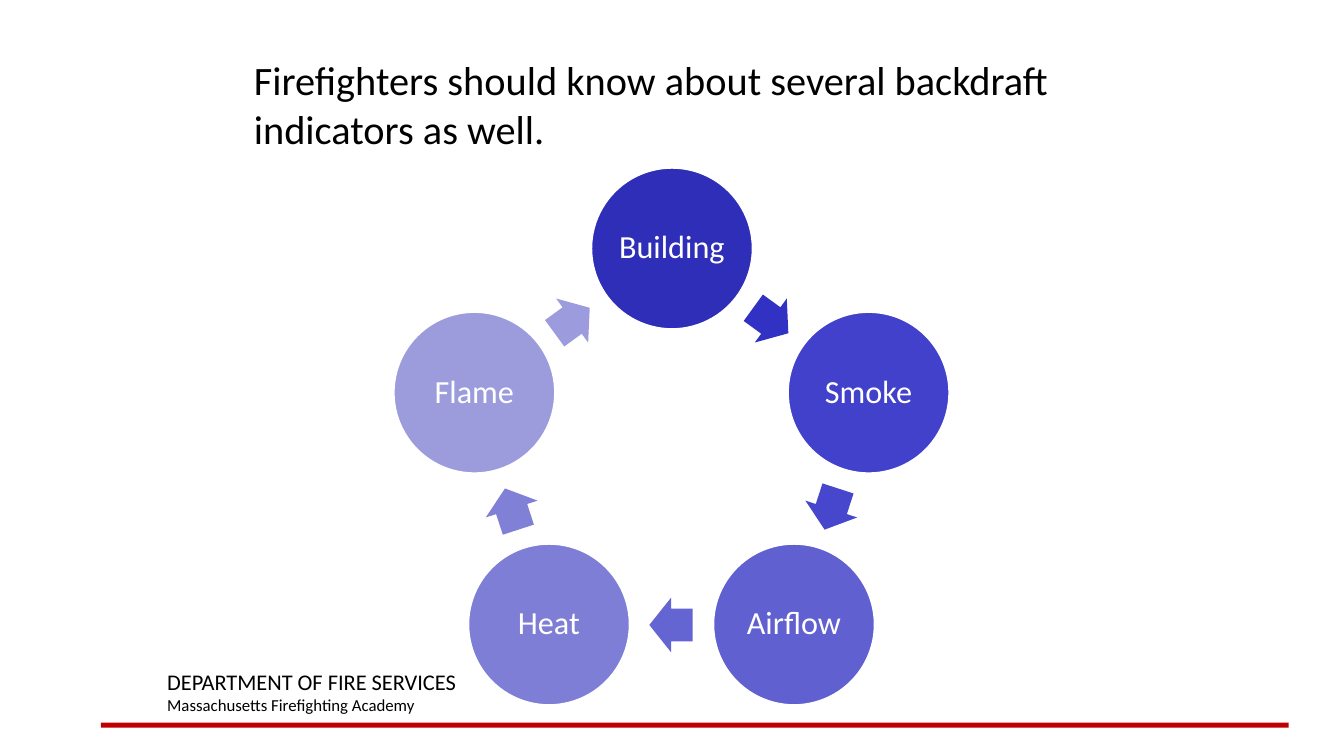
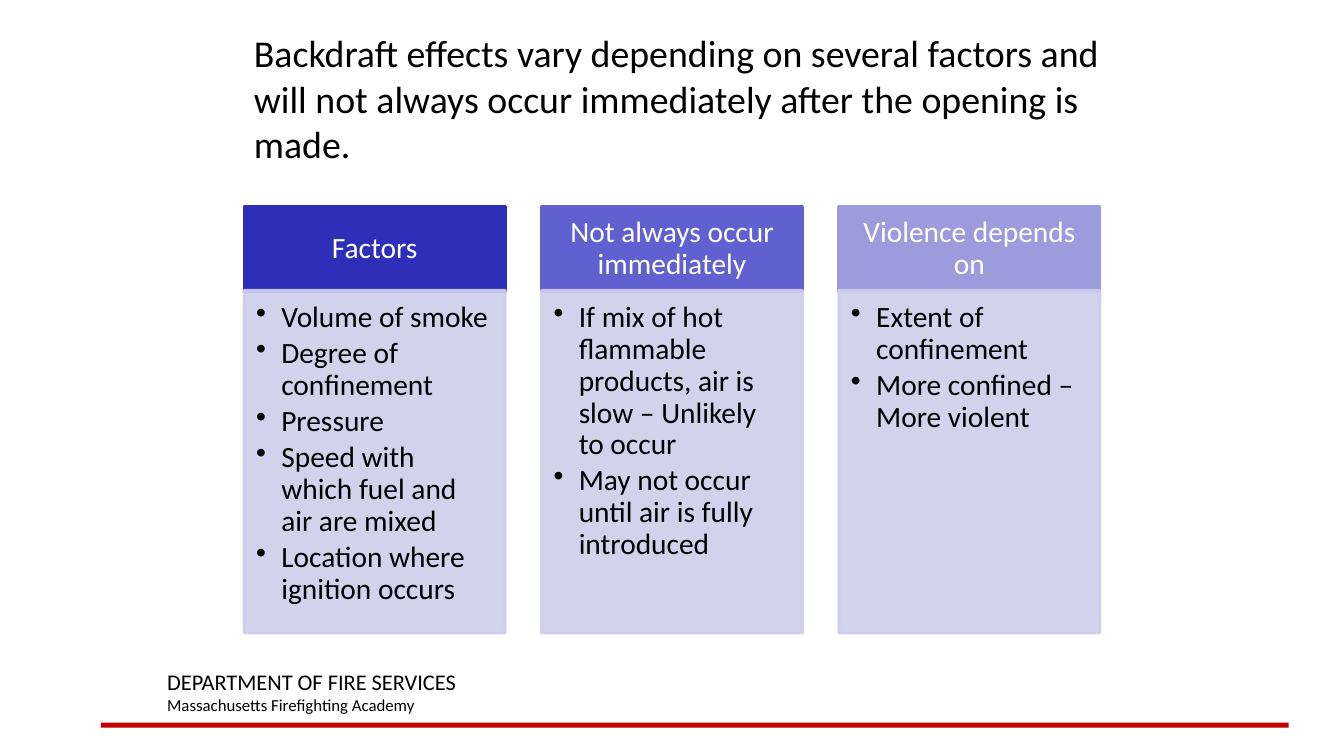
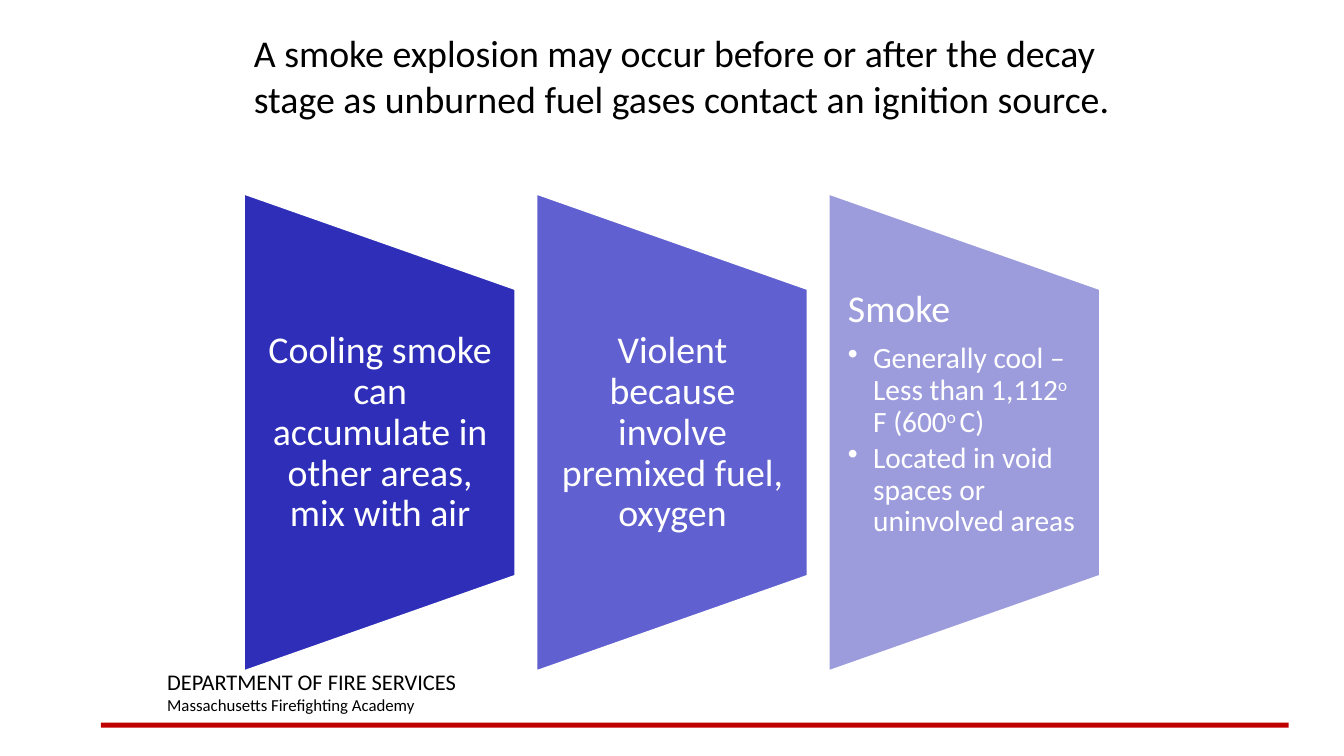
from dataclasses import dataclass
from math import cos, radians, sin

from lxml.etree import SubElement
from pptx import Presentation
from pptx.dml.color import RGBColor
from pptx.enum.shapes import MSO_SHAPE
from pptx.enum.text import MSO_ANCHOR, PP_ALIGN
from pptx.oxml.ns import qn
from pptx.presentation import Presentation as Deck
from pptx.shapes.autoshape import Shape
from pptx.slide import Slide
from pptx.util import Emu, Pt

PX = 9144  # 100 px to the inch
FONT = "Calibri"
COLORS = {
    "page": "FFFFFF",
    "ink": "000000",
    "light": "FFFFFF",
    "rule": "C00000",
    "panel": "CECEEC",
    "first": "2E2EB9",
    "middle": "6060D0",
    "last": "9C9CDD",
}
COLUMN_COLORS = (COLORS["first"], COLORS["middle"], COLORS["last"])


@dataclass(frozen=True)
class Box:
    left: int
    top: int
    width: int
    height: int

    def emu(self) -> tuple[Emu, ...]:
        return tuple(Emu(n * PX) for n in (self.left, self.top, self.width, self.height))


@dataclass(frozen=True)
class Line:
    """One paragraph; every second piece of it is superscript."""
    pieces: tuple[str, ...]
    size: float
    color: str = COLORS["ink"]
    align: PP_ALIGN = PP_ALIGN.LEFT
    bullet: bool = False
    spacing: float = 0.9
    after: float = 0.35


@dataclass(frozen=True)
class Stage:
    label: str
    color: str
    arrow_color: str


@dataclass(frozen=True)
class Column:
    heading: str
    points: tuple[str, ...]


STAGES = (
    Stage("Building", COLORS["first"], "3131C3"),
    Stage("Smoke", "4141CB", "4747CD"),
    Stage("Airflow", COLORS["middle"], "6464D2"),
    Stage("Heat", "7E7ED6", "8080D7"),
    Stage("Flame", COLORS["last"], "9B9BDD"),
)
COLUMNS = (
    Column("Factors", (
        "Volume of smoke",
        "Degree of confinement",
        "Pressure",
        "Speed with which fuel and air are mixed",
        "Location where ignition occurs",
    )),
    Column("Not always occur immediately", (
        "If mix of hot flammable products, air is slow – Unlikely to occur",
        "May not occur until air is fully introduced",
    )),
    Column("Violence depends on", (
        "Extent of confinement",
        "More confined – More violent",
    )),
)


def heading_line(text: str, size: float) -> Line:
    return Line((text,), size, COLORS["light"], PP_ALIGN.CENTER)


def bullet_line(*pieces: str, color: str = COLORS["ink"]) -> Line:
    return Line(pieces, 21, color, bullet=True, after=0.15)


EXPLOSION_CARDS = (
    (heading_line("Cooling smoke can accumulate in other areas, mix with air", 27),),
    (heading_line("Violent because involve premixed fuel, oxygen", 27),),
    (
        Line(("Smoke",), 27, COLORS["light"]),
        bullet_line("Generally cool – Less than 1,112", "o ", "F (600", "o ", "C)",
                    color=COLORS["light"]),
        bullet_line("Located in void spaces or uninvolved areas", color=COLORS["light"]),
    ),
)


# Shared drawing
def write(shape: Shape, lines: tuple[Line, ...], anchor: MSO_ANCHOR = MSO_ANCHOR.TOP,
          insets: tuple[int, int, int, int] = (10, 5, 10, 5)) -> None:
    frame = shape.text_frame
    frame.word_wrap = True
    frame.vertical_anchor = anchor
    (frame.margin_left, frame.margin_top,
     frame.margin_right, frame.margin_bottom) = (Emu(n * PX) for n in insets)
    for index, line in enumerate(lines):
        paragraph = frame.add_paragraph() if index else frame.paragraphs[0]
        if line.bullet:
            paragraph.level = 1
            properties = paragraph._p.get_or_add_pPr()
            properties.set("marL", str(25 * PX))
            properties.set("indent", str(-25 * PX))
            SubElement(properties, qn("a:buChar")).set("char", "•")
        paragraph.alignment = line.align
        paragraph.line_spacing = line.spacing
        if index < len(lines) - 1:
            paragraph.space_after = Pt(line.size * line.after)
        for position, piece in enumerate(line.pieces):
            run = paragraph.add_run()
            run.text = piece
            run.font.name = FONT
            run.font.size = Pt(line.size)
            run.font.color.rgb = RGBColor.from_string(line.color)
            if position % 2:
                run._r.get_or_add_rPr().set("baseline", "30000")


def add_block(slide: Slide, kind: MSO_SHAPE, box: Box, fill: str,
              outline: str | None = None, opacity: int = 100) -> Shape:
    shape = slide.shapes.add_shape(kind, *box.emu())
    shape.shadow.inherit = False
    shape.fill.solid()
    shape.fill.fore_color.rgb = RGBColor.from_string(fill)
    if outline:
        shape.line.color.rgb = RGBColor.from_string(outline)
        shape.line.width = Pt(2)
    else:
        shape.line.fill.background()
    if opacity < 100:
        for color in shape._element.spPr.iter(qn("a:srgbClr")):
            SubElement(color, qn("a:alpha")).set("val", str(opacity * 1000))
    return shape


def add_text(slide: Slide, box: Box, lines: tuple[Line, ...], **layout) -> None:
    write(slide.shapes.add_textbox(*box.emu()), lines, **layout)


def add_page(deck: Deck, title: str, title_top: int, title_size: float) -> Slide:
    slide = deck.slides.add_slide(deck.slide_layouts[6])
    slide.background.fill.solid()
    slide.background.fill.fore_color.rgb = RGBColor.from_string(COLORS["page"])
    # Footer
    add_block(slide, MSO_SHAPE.RECTANGLE, Box(100, 717, 1178, 5), COLORS["rule"])
    add_text(slide, Box(156, 658, 567, 57), (
        Line(("DEPARTMENT OF FIRE SERVICES",), 16, spacing=1.0, after=0),
        Line(("Massachusetts Firefighting Academy",), 12, spacing=1.0),
    ))
    # Title
    add_text(slide, Box(242, title_top, 883, 100), (Line((title,), title_size, spacing=1.0),))
    return slide


# Slide bodies
def on_ring(radius: int, angle: float, width: int, height: int) -> Box:
    """Box centred on the ring, with the angle taken clockwise from the top."""
    center_x = 666 + radius * sin(radians(angle))
    center_y = 453 - radius * cos(radians(angle))
    return Box(round(center_x - width / 2), round(center_y - height / 2), width, height)


def draw_indicator_cycle(slide: Slide) -> None:
    step = 360 / len(STAGES)
    for index, stage in enumerate(STAGES):
        angle = index * step
        circle = add_block(slide, MSO_SHAPE.OVAL, on_ring(206, angle, 161, 161),
                           stage.color, COLORS["light"])
        write(circle, (heading_line(stage.label, 23),), MSO_ANCHOR.MIDDLE, (3, 3, 3, 3))
        arrow_angle = angle + step / 2
        arrow = add_block(slide, MSO_SHAPE.RIGHT_ARROW, on_ring(167, arrow_angle, 43, 54),
                          stage.arrow_color)
        arrow.adjustments[0], arrow.adjustments[1] = 0.6, 0.5
        arrow.rotation = arrow_angle


def draw_factor_columns(slide: Slide) -> None:
    for index, (column, color) in enumerate(zip(COLUMNS, COLUMN_COLORS)):
        left = 242 + index * 295
        header = add_block(slide, MSO_SHAPE.RECTANGLE, Box(left, 205, 259, 84), color, color)
        write(header, (heading_line(column.heading, 21),), MSO_ANCHOR.MIDDLE, (16, 9, 16, 9))
        panel = add_block(slide, MSO_SHAPE.RECTANGLE, Box(left, 288, 259, 340),
                          COLORS["panel"], COLORS["panel"], opacity=90)
        write(panel, tuple(bullet_line(point) for point in column.points),
              insets=(12, 12, 16, 18))


def draw_explosion_cards(slide: Slide) -> None:
    for index, (lines, color) in enumerate(zip(EXPLOSION_CARDS, COLUMN_COLORS)):
        offset = index * 290
        card = add_block(slide, MSO_SHAPE.FLOWCHART_MANUAL_OPERATION,
                         Box(139 + offset, 294, 475, 270), color, COLORS["light"])
        card.rotation = 270
        anchor = MSO_ANCHOR.MIDDLE if len(lines) == 1 else MSO_ANCHOR.TOP
        add_text(slide, Box(242 + offset, 287, 270, 285), lines,
                 anchor=anchor, insets=(19, 0, 19, 0))


def main() -> None:
    deck = Presentation()
    deck.slide_width, deck.slide_height = Emu(1333 * PX), Emu(750 * PX)
    draw_indicator_cycle(add_page(
        deck, "Firefighters should know about several backdraft indicators as well.", 50, 28.8))
    draw_factor_columns(add_page(
        deck, "Backdraft effects vary depending on several factors and will not always "
        "occur immediately after the opening is made.", 25, 27))
    draw_explosion_cards(add_page(
        deck, "A smoke explosion may occur before or after the decay stage as unburned "
        "fuel gases contact an ignition source.", 25, 27))
    deck.save("out.pptx")


if __name__ == "__main__":
    main()
